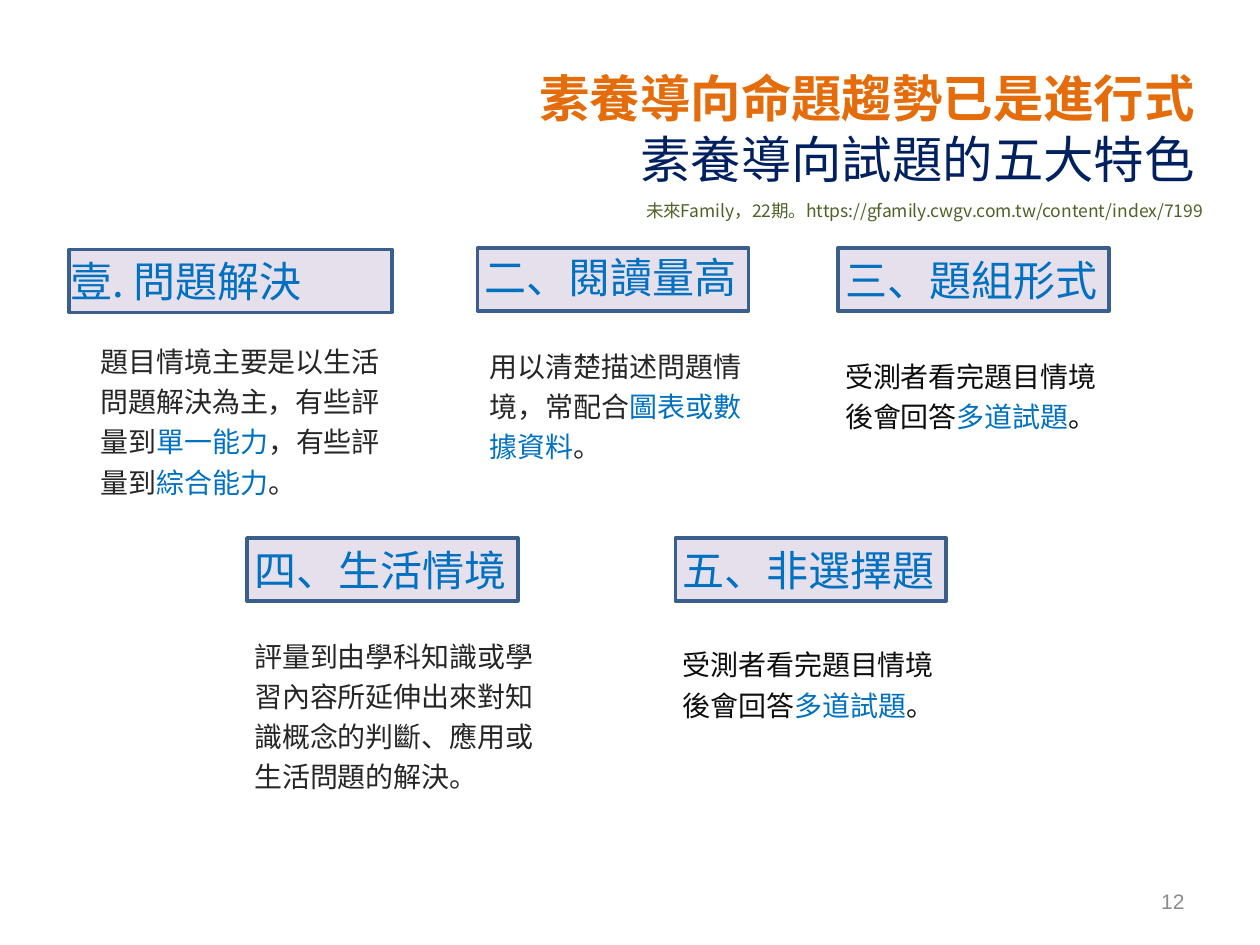
from lxml import etree
from pptx import Presentation
from pptx.dml.color import RGBColor
from pptx.enum.shapes import MSO_SHAPE
from pptx.enum.text import MSO_ANCHOR, PP_ALIGN
from pptx.oxml.ns import qn
from pptx.util import Inches, Pt

RECTANGLE = MSO_SHAPE.RECTANGLE
MIDDLE, TOP = MSO_ANCHOR.MIDDLE, MSO_ANCHOR.TOP
LEFT, RIGHT = PP_ALIGN.LEFT, PP_ALIGN.RIGHT
LATIN, CHINESE = "Arial", "Noto Sans CJK TC"
TITLE_FONT = "Noto Sans CJK SC"
COLUMNS, ROWS = 100, 75
COLORS = {
    "orange": "E46C0A", "navy": "002060", "olive": "4F6228", "blue": "0070C0",
    "dark": "262626", "black": "0D0D0D", "gray": "8C8C8C",
    "lilac": "E6E0EC", "border": "3A5F8C",
}
MULTIPLE = [("受測者看完題目情境後會回答", "black"), ("多道試題", "blue"), ("。", "black")]
CARDS = [
    {"box": (5.5, 19.8, 25.6, 5), "label": "問題解決", "numbered": True,
     "label_box": (-0.9, 0, 28, 5), "body_box": (1.5, 6.5, 25.6, 13.9),
     "body": [("題目情境主要是以生活問題解決為主，有些評量到", "dark"), ("單一能力", "blue"),
              ("，有些評量到", "dark"), ("綜合能力", "blue"), ("。", "dark")]},
    {"box": (37.9, 19.7, 21.5, 5), "label": "二、閱讀量高",
     "label_box": (-0.4, -0.2, 22.2, 5), "body_box": (0, 7, 23.6, 10.7),
     "body": [("用以清楚描述問題情境，常配合", "dark"), ("圖表或數據資料", "blue"), ("。", "dark")]},
    {"box": (66.5, 19.7, 21.5, 5), "label": "三、題組形式",
     "label_box": (-0.4, 0, 22.2, 5), "body_box": (-0.4, 7.8, 23.6, 7.5), "body": MULTIPLE},
    {"box": (19.6, 42.7, 21.5, 5), "label": "四、生活情境",
     "label_box": (-0.4, 0, 22.2, 5), "body_box": (-0.4, 7, 25.4, 13.9),
     "body": [("評量到由學科知識或學習內容所延伸出來對知識概念的判斷、應用或生活問題的解決。", "dark")]},
    {"box": (53.6, 42.7, 21.5, 5), "label": "五、非選擇題",
     "label_box": (-0.4, 0, 22.2, 5), "body_box": (-0.4, 7.7, 23.6, 7.5), "body": MULTIPLE},
]


def place(deck, box):
    """Turn a box in grid columns and rows into slide lengths."""
    column, row = deck.slide_width / COLUMNS, deck.slide_height / ROWS
    left, top, width, height = box
    return [round(n) for n in (left * column, top * row, width * column, height * row)]


def inside(box, offset):
    """Return a box whose corner is measured from the corner of another."""
    return (box[0] + offset[0], box[1] + offset[1], offset[2], offset[3])


def add_text(deck, page, box, spans, size, font, align=LEFT, anchor=TOP, wrap=True):
    """Add a one-paragraph text box of coloured spans and return its paragraph."""
    frame = page.shapes.add_textbox(*place(deck, box)).text_frame
    frame.word_wrap = wrap
    frame.vertical_anchor = anchor
    para = frame.paragraphs[0]
    para.alignment = align
    para.font.size = Pt(size)
    para.font.name = font
    for text, color in spans:
        add_span(para, text, color)
    return para


def add_span(para, text, color, font=CHINESE):
    """Add a run with its colour and East Asian font."""
    span = para.add_run()
    span.text = text
    span.font.color.rgb = RGBColor.from_string(COLORS[color])
    etree.SubElement(span.font._element, qn("a:ea"), typeface=font)
    return span


def add_numbering(para):
    """Give a paragraph a hanging Chinese number."""
    properties = para._p.get_or_add_pPr()
    indent = Inches(0.5)
    properties.set("marL", str(indent))
    properties.set("indent", str(-indent))
    properties.insert(0, etree.Element(qn("a:buAutoNum"), type="ea1ChtPeriod"))


def add_header(deck, page, box):
    """Add the two title lines and the source line below them."""
    para = add_text(deck, page, box, [], 28.8, LATIN, RIGHT, MIDDLE)
    first = add_span(para, "素養導向命題趨勢已是進行式", "orange", TITLE_FONT)
    first.font.bold = True
    para.add_line_break()
    add_span(para, "素養導向試題的五大特色", "navy")
    source = "未來Family，22期。https://gfamily.cwgv.com.tw/content/index/7199"
    add_text(deck, page, inside(box, (44.5, 11.5, 50, 2.7)), [(source, "olive")], 10, CHINESE)


def add_card(deck, page, card):
    """Add a framed label and the description under it."""
    box = card["box"]
    frame = page.shapes.add_shape(RECTANGLE, *place(deck, box))
    frame.shadow.inherit = False
    frame.fill.solid()
    frame.fill.fore_color.rgb = RGBColor.from_string(COLORS["lilac"])
    frame.line.color.rgb = RGBColor.from_string(COLORS["border"])
    frame.line.width = Pt(2)
    numbered = card.get("numbered", False)
    label = add_text(deck, page, inside(box, card["label_box"]),
                     [(card["label"], "blue")], 24, LATIN, wrap=numbered)
    if numbered:
        add_numbering(label)
    body = add_text(deck, page, inside(box, card["body_box"]), card["body"], 16, CHINESE)
    body.line_spacing = 1.2


def add_page_number(deck, page, box):
    """Add the page number at the lower right."""
    add_text(deck, page, box, [("12", "gray")], 12, LATIN, RIGHT, MIDDLE)


def main():
    """Build and save the slide."""
    deck = Presentation()
    deck.slide_width, deck.slide_height = Inches(10), Inches(7.5)
    page = deck.slides.add_slide(deck.slide_layouts[6])
    add_header(deck, page, (5.8, 3.9, 90, 12.5))
    for card in CARDS:
        add_card(deck, page, card)
    add_page_number(deck, page, (71.7, 69.5, 23.3, 4))
    deck.save("out.pptx")


if __name__ == "__main__":
    main()
